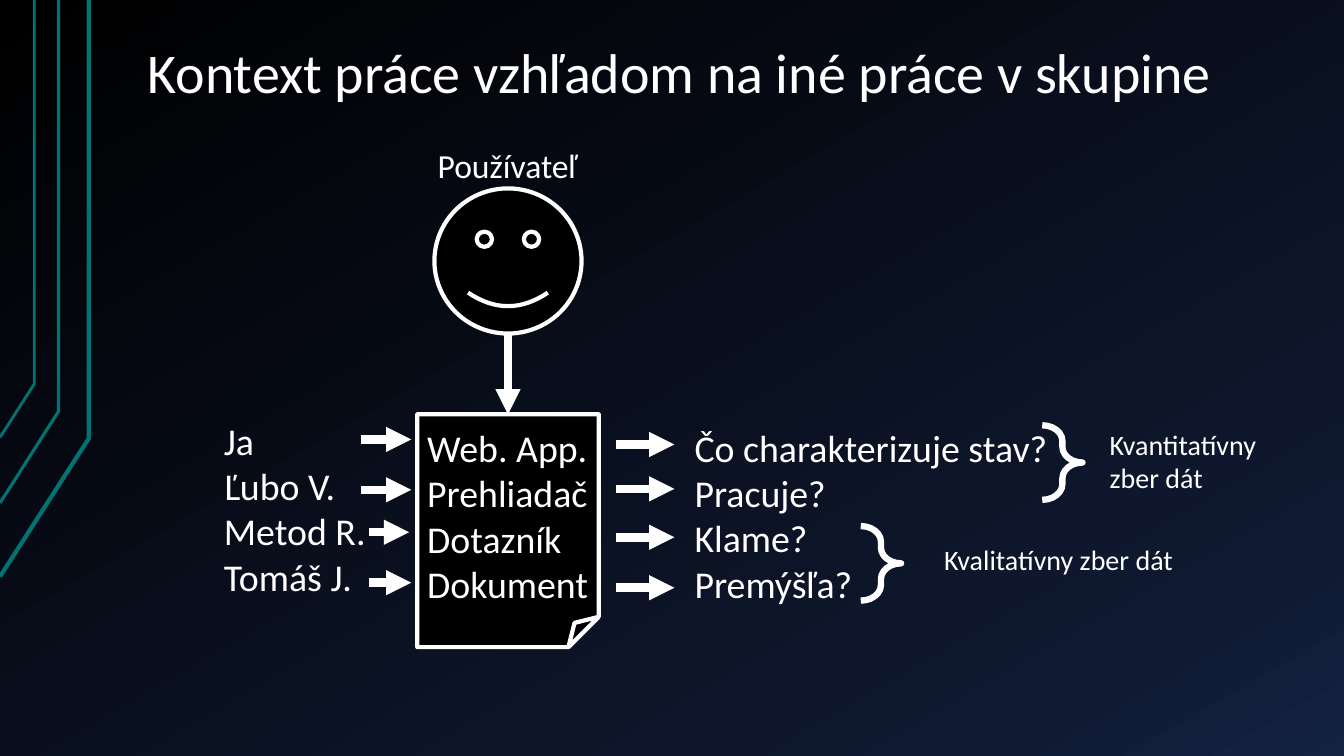
from dataclasses import dataclass

import lxml.etree
import pptx
import pptx.dml.color
import pptx.enum.shapes
import pptx.enum.text
import pptx.oxml.ns
import pptx.shapes.autoshape
import pptx.slide
import pptx.text.text
import pptx.util

Pt = pptx.util.Pt
RGBColor = pptx.dml.color.RGBColor
Align = pptx.enum.text.PP_ALIGN
Anchor = pptx.enum.text.MSO_ANCHOR
Preset = pptx.enum.shapes.MSO_SHAPE
qn = pptx.oxml.ns.qn

WHITE = RGBColor(0xFF, 0xFF, 0xFF)
BLACK = RGBColor(0x00, 0x00, 0x00)
TEAL = RGBColor(0x00, 0x73, 0x73)
NIGHT = RGBColor(0x0F, 0x19, 0x31)
NAVY = RGBColor(0x14, 0x22, 0x42)
FONT = "Calibri"
BODY_SIZE = 27
NOTE_SIZE = 20


@dataclass(frozen=True)
class Box:
    left: float
    top: float
    width: float
    height: float

    def lengths(self) -> list[int]:
        return [Pt(v) for v in (self.left, self.top, self.width, self.height)]


@dataclass(frozen=True)
class Rail:
    x: float
    bend: float
    end: float
    weight: float


@dataclass(frozen=True)
class Arrow:
    x1: float
    y1: float
    x2: float
    y2: float


@dataclass(frozen=True)
class Label:
    text: str
    box: Box
    size: float
    inset: tuple[float, float] = (7.2, 3.6)
    align: Align = Align.LEFT
    anchor: Anchor = Anchor.TOP
    spacing: float = 1.0
    wrap: bool = True


RAILS = [
    Rail(63.4, 313.2, 411.8, 3),
    Rail(41.8, 293.8, 359.3, 2.25),
    Rail(24.5, 274.3, 312.5, 2),
]

# User to document, people to document, document to questions
ARROWS = [
    Arrow(362.9, 238.3, 362.9, 296),
    Arrow(257.8, 313.9, 293.8, 313.9),
    Arrow(257.8, 349.9, 293.8, 349.9),
    Arrow(263.5, 380.2, 292.3, 380.2),
    Arrow(263.5, 416.2, 293.8, 416.2),
    *(Arrow(440, y, 481.7, y) for y in (317.5, 349.2, 383.8, 419.8)),
]

BRACES = [Box(614.9, 375.8, 28.8, 53.3), Box(744.5, 303.8, 28.8, 53.3)]

LABELS = [
    Label("Kontext práce vzhľadom na iné práce v skupine", Box(96, 21.6, 816, 59), 40,
          inset=(9.4, 5), anchor=Anchor.BOTTOM, spacing=0.9),
    Label("Používateľ", Box(304.6, 100.1, 115.9, 36), 24, align=Align.CENTER, wrap=False),
    Label("Ja\nĽubo V.\nMetod R.\nTomáš J.", Box(145.6, 283.7, 136.8, 159.8), BODY_SIZE,
          inset=(14.4, 14.4)),
    Label("Čo charakterizuje stav?\nPracuje?\nKlame?\nPremýšľa?",
          Box(481.7, 288.7, 282.2, 159.8), BODY_SIZE, inset=(14.4, 14.4)),
    Label("Kvalitatívny zber dát", Box(667.4, 383.8, 192.2, 31.7), NOTE_SIZE),
    Label("Kvantitatívny\nzber dát", Box(785.5, 301.7, 170, 55.4), NOTE_SIZE),
]


def write_text(frame: pptx.text.text.TextFrame, text: str, *, size: float,
               inset: tuple[float, float] = (7.2, 3.6), align: Align = Align.LEFT,
               anchor: Anchor = Anchor.TOP, spacing: float = 1.0, wrap: bool = True) -> None:
    frame.word_wrap = wrap
    frame.vertical_anchor = anchor
    frame.margin_left = frame.margin_right = Pt(inset[0])
    frame.margin_top = frame.margin_bottom = Pt(inset[1])
    frame.text = text
    for paragraph in frame.paragraphs:
        paragraph.alignment = align
        paragraph.line_spacing = spacing
        for run in paragraph.runs:
            run.font.name = FONT
            run.font.size = Pt(size)
            run.font.color.rgb = WHITE


def paint_background(slide: pptx.slide.Slide) -> None:
    fill = slide.background.fill
    fill.gradient()
    fill.gradient_angle = 300
    stops = next(slide.element.iter(qn("a:gsLst")))
    for stop in list(stops):
        stops.remove(stop)
    for percent, color in ((0, BLACK), (85, NIGHT), (100, NAVY)):
        stop = lxml.etree.SubElement(stops, qn("a:gs"), pos=str(percent * 1000))
        lxml.etree.SubElement(stop, qn("a:srgbClr"), val=str(color))


def draw_rail(slide: pptx.slide.Slide, rail: Rail) -> None:
    outline = slide.shapes.build_freeform(Pt(0), Pt(rail.end))
    outline.add_line_segments([(Pt(rail.x), Pt(rail.bend)), (Pt(rail.x), Pt(0))], close=False)
    shape = outline.convert_to_shape()
    shape.shadow.inherit = False
    shape.fill.background()
    shape.line.color.rgb = TEAL
    shape.line.width = Pt(rail.weight)


def draw_preset(slide: pptx.slide.Slide, preset: Preset, box: Box, weight: float,
                fill: RGBColor | None = None) -> pptx.shapes.autoshape.Shape:
    shape = slide.shapes.add_shape(preset, *box.lengths())
    shape.shadow.inherit = False
    if fill is None:
        shape.fill.background()
    else:
        shape.fill.solid()
        shape.fill.fore_color.rgb = fill
    shape.line.color.rgb = WHITE
    shape.line.width = Pt(weight)
    return shape


def draw_arrow(slide: pptx.slide.Slide, arrow: Arrow) -> None:
    connector = slide.shapes.add_connector(
        pptx.enum.shapes.MSO_CONNECTOR.STRAIGHT,
        Pt(arrow.x1), Pt(arrow.y1), Pt(arrow.x2), Pt(arrow.y2))
    connector.line.color.rgb = WHITE
    connector.line.width = Pt(6)
    properties = connector.element.spPr
    lxml.etree.SubElement(properties.find(qn("a:ln")), qn("a:tailEnd"), type="triangle")
    lxml.etree.SubElement(properties, qn("a:effectLst"))


def draw_label(slide: pptx.slide.Slide, label: Label) -> None:
    frame = slide.shapes.add_textbox(*label.box.lengths()).text_frame
    write_text(frame, label.text, size=label.size, inset=label.inset, align=label.align,
               anchor=label.anchor, spacing=label.spacing, wrap=label.wrap)


def main() -> None:
    presentation = pptx.Presentation()
    presentation.slide_width, presentation.slide_height = Pt(960), Pt(540)
    slide = presentation.slides.add_slide(presentation.slide_layouts[6])

    # Backdrop
    paint_background(slide)
    for rail in RAILS:
        draw_rail(slide, rail)

    # User and document
    draw_preset(slide, Preset.SMILEY_FACE, Box(310.3, 134.6, 105.1, 103.7), 3, BLACK)
    document = draw_preset(slide, Preset.FOLDED_CORNER, Box(298.1, 295.9, 129.6, 166.3), 3, BLACK)
    write_text(document.text_frame, "Web. App.\nPrehliadač\nDotazník\nDokument",
               size=BODY_SIZE, align=Align.JUSTIFY, anchor=Anchor.MIDDLE)

    # Flow, braces and wording
    for arrow in ARROWS:
        draw_arrow(slide, arrow)
    for box in BRACES:
        brace = draw_preset(slide, Preset.RIGHT_BRACE, box, 4.5)
        brace.adjustments[0] = 0.39
    for label in LABELS:
        draw_label(slide, label)

    presentation.save("out.pptx")


if __name__ == "__main__":
    main()
